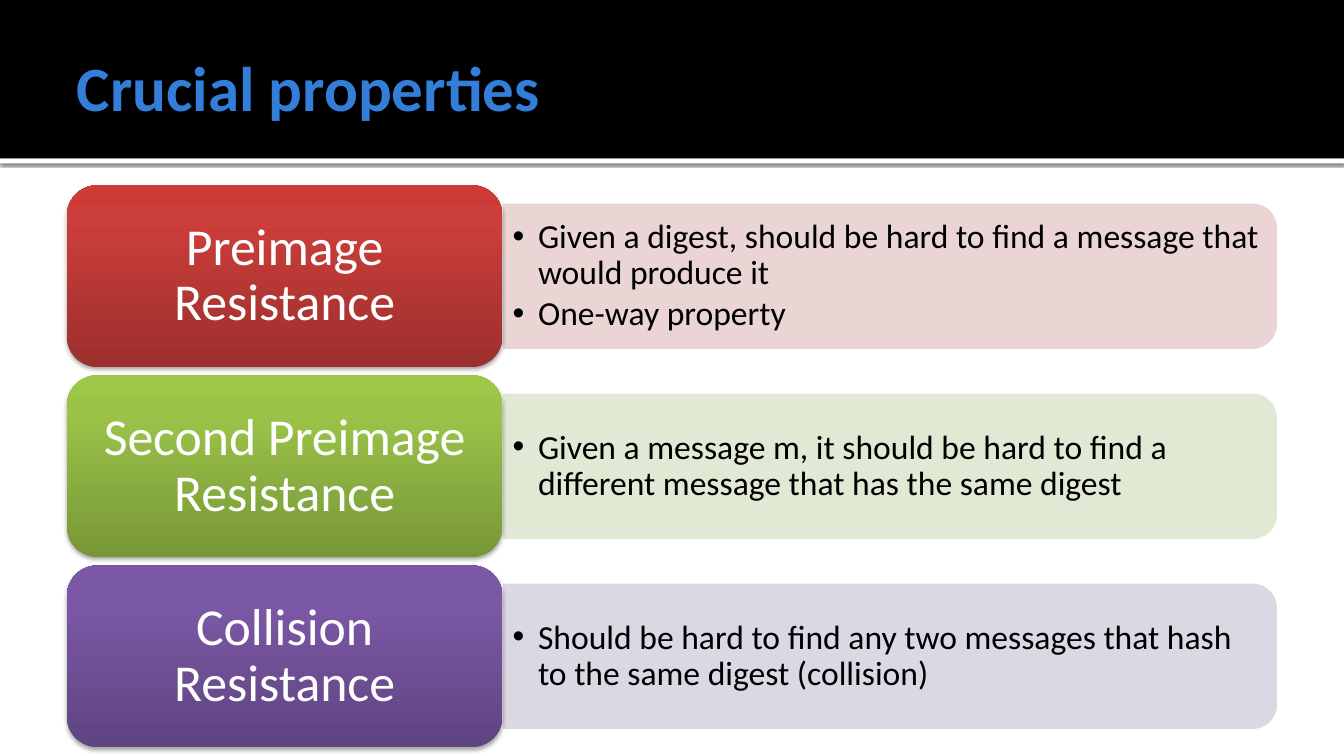
from lxml.etree import SubElement
from pptx import Presentation
from pptx.dml.color import RGBColor
from pptx.enum.shapes import MSO_SHAPE
from pptx.enum.text import MSO_ANCHOR, PP_ALIGN
from pptx.oxml import parse_xml
from pptx.oxml.ns import nsdecls, qn
from pptx.util import Cm, Pt

COLORS = {"header": "000000", "strip": "FFFFFF", "title": "337ED9",
          "label": "FFFFFF", "body": "000000"}
PROPERTIES = [
    ("Preimage Resistance",
     ["Given a digest, should be hard to find a message that would produce it",
      "One-way property"],
     "E8D0D0", ("9C2F2D", "CB3E3A", "CE3B37")),
    ("Second Preimage Resistance",
     ["Given a message m, it should be hard to find a different message "
      "that has the same digest"],
     "DEE7D1", ("779737", "9BC348", "9DC746")),
    ("Collision Resistance",
     ["Should be hard to find any two messages that hash to the same digest (collision)"],
     "D8D3E0", ("5F4480", "7B58A6", "7C57A8")),
]
FIRST_MIDDLE, ROW_PITCH = 6.96, 4.79
LABEL_LEFT, LABEL_WIDTH, LABEL_HEIGHT = 1.69, 10.97, 4.58
PANEL_LEFT, PANEL_WIDTH, PANEL_HEIGHT = 12.67, 19.51, 3.66
BODY_WIDTH, BODY_HEIGHT = 19.35, 3.3


def add_block(slide, preset, left, top, width, height, color=None):
    block = slide.shapes.add_shape(preset, Cm(left), Cm(top), Cm(width), Cm(height))
    block.shadow.inherit = False
    block.line.fill.background()
    if color:
        block.fill.solid()
        block.fill.fore_color.rgb = RGBColor.from_string(color)
    return block


def add_shadow(block, opacity, blur, distance):
    effects = block._element.spPr.find(qn("a:effectLst"))
    shadow = SubElement(effects, qn("a:outerShdw"), blurRad=str(Pt(blur)),
                        dist=str(Pt(distance)), dir="5400000", rotWithShape="0")
    tint = SubElement(shadow, qn("a:srgbClr"), val="000000")
    SubElement(tint, qn("a:alpha"), val=str(opacity * 1000))


def set_gradient(block, shades):
    stops = "".join(
        f'<a:gs pos="{position * 1000}"><a:srgbClr val="{shade}"/></a:gs>'
        for position, shade in zip((0, 80, 100), shades))
    gradient = parse_xml(
        f'<a:gradFill {nsdecls("a")} rotWithShape="1"><a:gsLst>{stops}</a:gsLst>'
        '<a:lin ang="16200000" scaled="0"/></a:gradFill>')
    block._element.spPr.find(qn("a:prstGeom")).addnext(gradient)


def set_opacity(block, percent):
    tint = block._element.spPr.find(qn("a:solidFill"))[0]
    SubElement(tint, qn("a:alpha"), val=str(percent * 1000))


def write_text(holder, paragraphs, size, color, align=PP_ALIGN.LEFT, bold=False,
               line_spacing=0.9, space_after=0, bullet=False,
               margins=(0.25, 0.13, 0.25, 0.13)):
    frame = holder.text_frame
    frame.word_wrap = True
    frame.vertical_anchor = MSO_ANCHOR.MIDDLE
    (frame.margin_left, frame.margin_top,
     frame.margin_right, frame.margin_bottom) = map(Cm, margins)
    for index, text in enumerate(paragraphs):
        paragraph = frame.add_paragraph() if index else frame.paragraphs[0]
        paragraph.alignment = align
        paragraph.line_spacing = line_spacing
        paragraph.space_after = Pt(space_after)
        run = paragraph.add_run()
        run.text = text
        run.font.name = "Calibri"
        run.font.size = Pt(size)
        run.font.bold = bold
        run.font.color.rgb = RGBColor.from_string(color)
        if bullet:
            properties = paragraph._p.get_or_add_pPr()
            properties.set("marL", str(Cm(0.64)))
            properties.set("indent", str(-Cm(0.64)))
            SubElement(properties, qn("a:buFont"), typeface="Arial")
            SubElement(properties, qn("a:buChar"), char="•")


def add_text(slide, left, top, width, height, paragraphs, **style):
    box = slide.shapes.add_textbox(Cm(left), Cm(top), Cm(width), Cm(height))
    write_text(box, paragraphs, **style)


def add_header(slide, title):
    strip = add_block(slide, MSO_SHAPE.RECTANGLE, 0, 3.99, 33.87, 0.13, COLORS["strip"])
    add_shadow(strip, 60, 2.5, 0.8)
    add_block(slide, MSO_SHAPE.RECTANGLE, 0, 0, 33.87, 3.99, COLORS["header"])
    add_text(slide, 1.69, 0.43, 30.48, 3.48, [title], size=45, color=COLORS["title"],
             bold=True, line_spacing=1, margins=(0.25, 0.13, 0.13, 0.13))


def add_property(slide, middle, name, points, tint, shades):
    panel = add_block(slide, MSO_SHAPE.ROUND_2_SAME_RECTANGLE,
                      PANEL_LEFT + (PANEL_WIDTH - PANEL_HEIGHT) / 2,
                      middle - PANEL_WIDTH / 2, PANEL_HEIGHT, PANEL_WIDTH, tint)
    panel.rotation = 90
    set_opacity(panel, 90)
    add_text(slide, PANEL_LEFT, middle - BODY_HEIGHT / 2, BODY_WIDTH, BODY_HEIGHT,
             points, size=24, color=COLORS["body"], space_after=3, bullet=True)
    label = add_block(slide, MSO_SHAPE.ROUNDED_RECTANGLE, LABEL_LEFT,
                      middle - LABEL_HEIGHT / 2, LABEL_WIDTH, LABEL_HEIGHT)
    set_gradient(label, shades)
    add_shadow(label, 35, 3.1, 1.8)
    write_text(label, [name], size=37, color=COLORS["label"], align=PP_ALIGN.CENTER,
               margins=(0.38, 0.2, 0.38, 0.2))


def main():
    deck = Presentation()
    deck.slide_width, deck.slide_height = Cm(33.87), Cm(19.05)
    slide = deck.slides.add_slide(deck.slide_layouts[6])
    add_header(slide, "Crucial properties")
    for row, details in enumerate(PROPERTIES):
        add_property(slide, FIRST_MIDDLE + row * ROW_PITCH, *details)
    deck.save("out.pptx")


if __name__ == "__main__":
    main()
